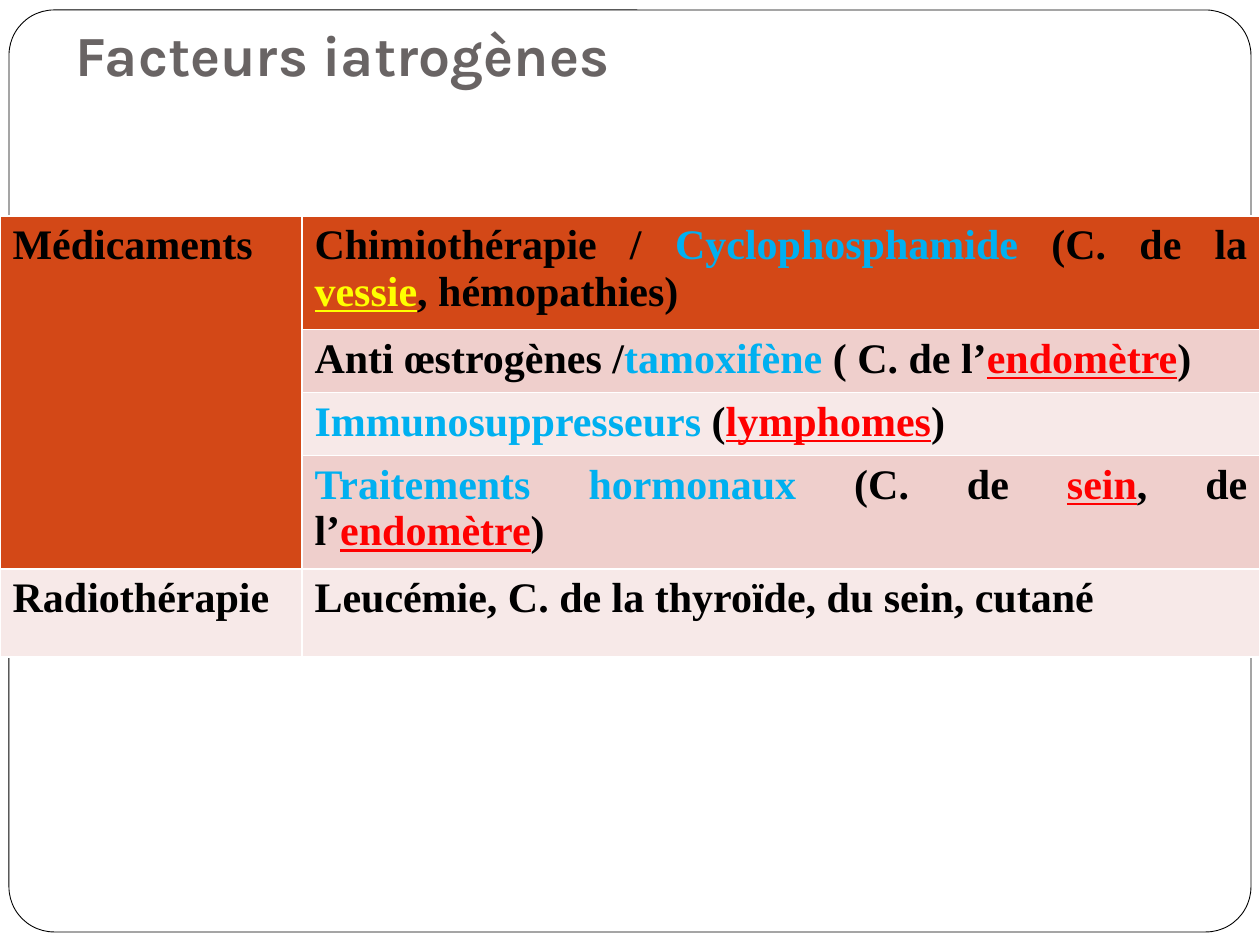
from pptx import Presentation as Deck
from pptx.dml.color import RGBColor as Color
from pptx.enum.shapes import MSO_SHAPE as Shape
from pptx.enum.text import MSO_ANCHOR as Anchor, PP_ALIGN as Align
from pptx.oxml import parse_xml
from pptx.oxml.ns import nsdecls
from pptx.util import Emu, Pt

COLORS = {
    "white": "FFFFFF", "black": "000000", "title": "696464",
    "header": "D34817", "dark": "EFCFCC", "light": "F7E9E8",
    "drug": "00B0F0", "yellow": "FFFF00", "red": "FF0000",
}
UNDERLINED = ("yellow", "red")
SCALE = 914400 / 126


def px(length):
    return Emu(round(length * SCALE))


def color(name):
    return Color.from_string(COLORS[name])


def add_span(para, text, *, font, size, ink="black", underline=False):
    span = para.add_run()
    span.text = text
    span.font.name = font
    span.font.size = Pt(size)
    span.font.bold = True
    span.font.underline = underline
    span.font.color.rgb = color(ink)


class SlideBuilder:
    title_style = {"font": "Karla", "size": 32.4, "ink": "title"}
    cell_style = {"font": "Times New Roman", "size": 24}

    def __init__(self, deck):
        self.slide = deck.slides.add_slide(deck.slide_layouts[6])

    def frame(self, left, top, width, height):
        shape = self.slide.shapes.add_shape(
            Shape.ROUNDED_RECTANGLE, px(left), px(top), px(width), px(height))
        shape.adjustments[0] = 0.049
        shape.shadow.inherit = False
        shape.fill.solid()
        shape.fill.fore_color.rgb = color("white")
        shape.line.color.rgb = color("black")
        shape.line.width = Pt(0.5)

    def title(self, text, left, top, width, height):
        box = self.slide.shapes.add_textbox(px(left), px(top), px(width), px(height))
        frame = box.text_frame
        frame.word_wrap = True
        frame.vertical_anchor = Anchor.BOTTOM
        frame.margin_bottom = px(13)
        add_span(frame.paragraphs[0], text, **self.title_style)

    def table(self, left, top, columns, heights):
        table = self.slide.shapes.add_table(
            len(heights), len(columns), px(left), px(top),
            px(sum(columns)), px(sum(heights))).table
        for column, width in zip(table.columns, columns):
            column.width = px(width)
        for row, height in zip(table.rows, heights):
            row.height = px(height)
        return table

    def cell(self, cell, fill, spans):
        """Fill a cell with (text, colour name) spans."""
        self.borders(cell)
        cell.fill.solid()
        cell.fill.fore_color.rgb = color(fill)
        para = cell.text_frame.paragraphs[0]
        para.alignment = Align.JUSTIFY
        for text, ink in spans:
            add_span(para, text, ink=ink, underline=ink in UNDERLINED,
                     **self.cell_style)

    def borders(self, cell):
        properties = cell._tc.get_or_add_tcPr()
        for side in "LRTB":
            properties.append(parse_xml(
                f'<a:ln{side} {nsdecls("a")} w="{Pt(1)}"><a:solidFill>'
                f'<a:srgbClr val="{COLORS["white"]}"/></a:solidFill></a:ln{side}>'))


FACTORS = [
    ("header", [("Chimiothérapie / ", "black"), ("Cyclophosphamide", "drug"),
                (" (C. de la ", "black"), ("vessie", "yellow"),
                (", hémopathies)", "black")]),
    ("dark", [("Anti œstrogènes /", "black"), ("tamoxifène", "drug"),
              (" ( C. de l’", "black"), ("endomètre", "red"), (")", "black")]),
    ("light", [("Immunosuppresseurs ", "drug"), ("(", "black"),
               ("lymphomes", "red"), (") ", "black")]),
    ("dark", [("Traitements hormonaux", "drug"), (" (C. de ", "black"),
              ("sein", "red"), (", de l’", "black"), ("endomètre", "red"),
              (")", "black")]),
    ("light", [("Leucémie, C. de la thyroïde, du sein, cutané", "black")]),
]
CATEGORIES = {0: ("header", "Médicaments "), 4: ("light", "Radiothérapie ")}


def main():
    deck = Deck()
    deck.slide_width, deck.slide_height = px(1260), px(945)
    builder = SlideBuilder(deck)
    builder.frame(9, 10, 1242, 922)
    builder.title("Facteurs iatrogènes", 63, 10, 1134, 91)

    table = builder.table(0, 216, [302, 958], [88, 54, 60, 88, 88])
    table.cell(0, 0).merge(table.cell(3, 0))
    for row, (fill, text) in CATEGORIES.items():
        builder.cell(table.cell(row, 0), fill, [(text, "black")])
    for row, (fill, spans) in enumerate(FACTORS):
        builder.cell(table.cell(row, 1), fill, spans)
    deck.save("out.pptx")


if __name__ == "__main__":
    main()
